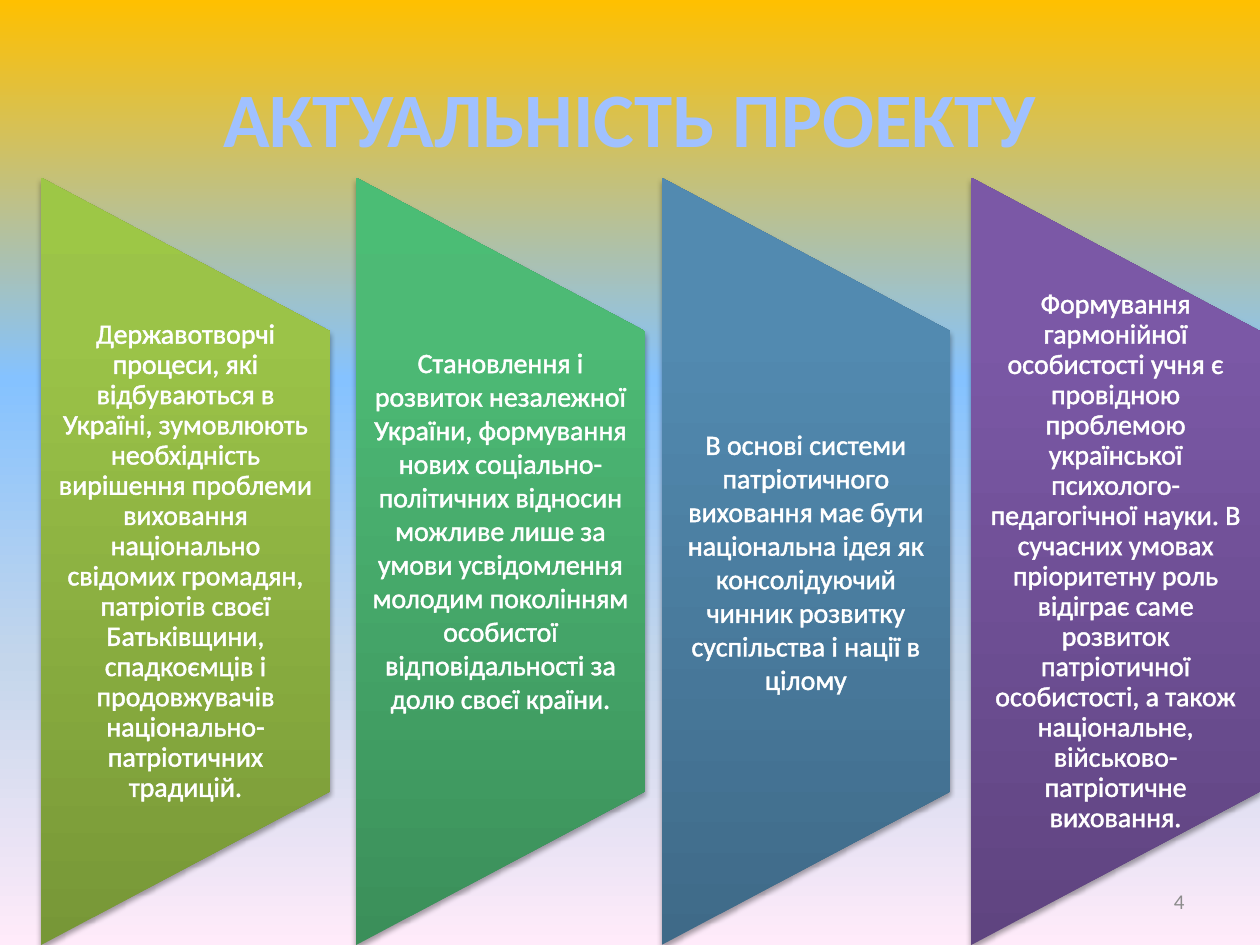
import pptx
import pptx.util
import pptx.enum.shapes
import pptx.enum.text
import pptx.oxml
import pptx.oxml.ns
from pptx.dml.color import RGBColor

Pt = pptx.util.Pt
qn = pptx.oxml.ns.qn
ALIGN = pptx.enum.text.PP_ALIGN
A_NS = pptx.oxml.ns.nsdecls("a")

THEME = {
    "font": "Calibri",
    "title_size": 44, "panel_size": 16, "number_size": 12,
    "white": "FFFFFF", "number": "8C8C8C", "title_outline": "467AB8",
    "background": [(0, "FFC000"), (40, "85C2FF"), (70, "C4D6EB"), (100, "FFEBFA")],
    "title": [(0, "BFD3F9"), (9, "A0C1FF"), (50, "003D85"), (79, "A0C1FF"), (100, "BFD3F9")],
    "green": [(0, "779737"), (80, "9BC348"), (100, "9DC746")],
    "emerald": [(0, "3B8F5A"), (80, "4DBA75"), (100, "4BBD75")],
    "blue": [(0, "3F6A88"), (80, "528AB0"), (100, "518BB3")],
    "violet": [(0, "5F4480"), (80, "7B58A6"), (100, "7C57A8")],
}

TITLE = "АКТУАЛЬНІСТЬ ПРОЕКТУ"
SLIDE_NUMBER = "4"
# left edge, gradient, line spacing, bottom inset, wording
PANELS = [
    (23.5, "green", 0.9, 0,
     "Державотворчі процеси, які відбуваються в Україні, зумовлюють необхідність "
     "вирішення проблеми виховання національно свідомих громадян, патріотів своєї "
     "Батьківщини, спадкоємців і продовжувачів національно-патріотичних традицій."),
    (203.5, "emerald", 1, 36,
     "Становлення і розвиток незалежної України, формування нових "
     "соціально-політичних відносин можливе лише за умови усвідомлення молодим "
     "поколінням особистої відповідальності за долю своєї країни."),
    (378, "blue", 1, 0,
     "В основі системи патріотичного виховання має бути національна ідея як "
     "консолідуючий чинник розвитку суспільства і нації в цілому"),
    (555, "violet", 0.9, 0,
     "Формування гармонійної особистості учня є провідною проблемою української "
     "психолого-педагогічної науки. В сучасних умовах пріоритетну роль відіграє "
     "саме розвиток патріотичної особистості, а також національне, "
     "військово-патріотичне виховання."),
]
PANEL_WIDTH, PANEL_HEIGHT, PANEL_MIDDLE = 165, 438.5, 320.75
PANEL_TEXT_HEIGHT = 263


def set_gradient(fill, owner, stops, angle):
    """Fill with stops at a fixed angle that does not turn with the shape."""
    fill.gradient()
    default = next(owner.iter(qn("a:gradFill")))
    stop_list = "".join(
        f'<a:gs pos="{position * 1000}"><a:srgbClr val="{colour}"/></a:gs>'
        for position, colour in stops)
    default.getparent().replace(default, pptx.oxml.parse_xml(
        f'<a:gradFill {A_NS} rotWithShape="0"><a:gsLst>{stop_list}</a:gsLst>'
        f'<a:lin ang="{angle * 60000}" scaled="0"/></a:gradFill>'))


def add_text(slide, text, box, *, size, colour=None, gradient=None, bold=False,
             align=ALIGN.CENTER, outline=None, spacing=1, insets=(7.2, 3.6, 7.2, 3.6)):
    frame = slide.shapes.add_textbox(*map(Pt, box)).text_frame
    frame.word_wrap = True
    frame.vertical_anchor = pptx.enum.text.MSO_ANCHOR.MIDDLE
    (frame.margin_left, frame.margin_top,
     frame.margin_right, frame.margin_bottom) = map(Pt, insets)
    paragraph = frame.paragraphs[0]
    paragraph.alignment = align
    paragraph.line_spacing = spacing
    run = paragraph.add_run()
    run.text = text
    font = run.font
    font.name, font.size, font.bold = THEME["font"], Pt(size), bold
    properties = run._r.get_or_add_rPr()
    if gradient:
        set_gradient(font.fill, properties, gradient, 90)
    else:
        font.color.rgb = RGBColor.from_string(colour)
    if outline:
        outline_colour, width = outline
        properties.insert(0, pptx.oxml.parse_xml(
            f'<a:ln {A_NS} w="{Pt(width)}"><a:solidFill>'
            f'<a:srgbClr val="{outline_colour}"/></a:solidFill></a:ln>'))


def add_panel(slide, left, stops):
    """Draw a trapezoid lying on its side, with its long edge on the left."""
    panel = slide.shapes.add_shape(
        pptx.enum.shapes.MSO_SHAPE.FLOWCHART_MANUAL_OPERATION,
        Pt(left + (PANEL_WIDTH - PANEL_HEIGHT) / 2), Pt(PANEL_MIDDLE - PANEL_WIDTH / 2),
        Pt(PANEL_HEIGHT), Pt(PANEL_WIDTH))
    panel.rotation = 270
    set_gradient(panel.fill, panel._element.spPr, stops, 270)
    panel.line.fill.background()
    panel.shadow.inherit = False
    panel._element.spPr.find(qn("a:effectLst")).append(pptx.oxml.parse_xml(
        f'<a:outerShdw {A_NS} blurRad="{Pt(3.1)}" dist="{Pt(1.8)}" dir="5400000" '
        'rotWithShape="0"><a:srgbClr val="000000"><a:alpha val="35000"/></a:srgbClr>'
        '</a:outerShdw>'))


def main():
    deck = pptx.Presentation()
    deck.slide_width, deck.slide_height = Pt(720), Pt(540)
    slide = deck.slides.add_slide(deck.slide_layouts[6])
    set_gradient(slide.background.fill, slide.element, THEME["background"], 90)

    add_text(slide, TITLE, (36, 21.6, 648, 90), size=THEME["title_size"], bold=True,
             gradient=THEME["title"], outline=(THEME["title_outline"], 0.83))
    for left, gradient, spacing, bottom_inset, wording in PANELS:
        add_panel(slide, left, THEME[gradient])
        add_text(slide, wording,
                 (left, PANEL_MIDDLE - PANEL_TEXT_HEIGHT / 2, PANEL_WIDTH, PANEL_TEXT_HEIGHT),
                 size=THEME["panel_size"], colour=THEME["white"],
                 outline=(THEME["white"], 1.45), spacing=spacing,
                 insets=(8, 0, 8, bottom_inset))
    add_text(slide, SLIDE_NUMBER, (516, 500.5, 168, 28.75), size=THEME["number_size"],
             colour=THEME["number"], align=ALIGN.RIGHT)
    deck.save("out.pptx")


if __name__ == "__main__":
    main()
